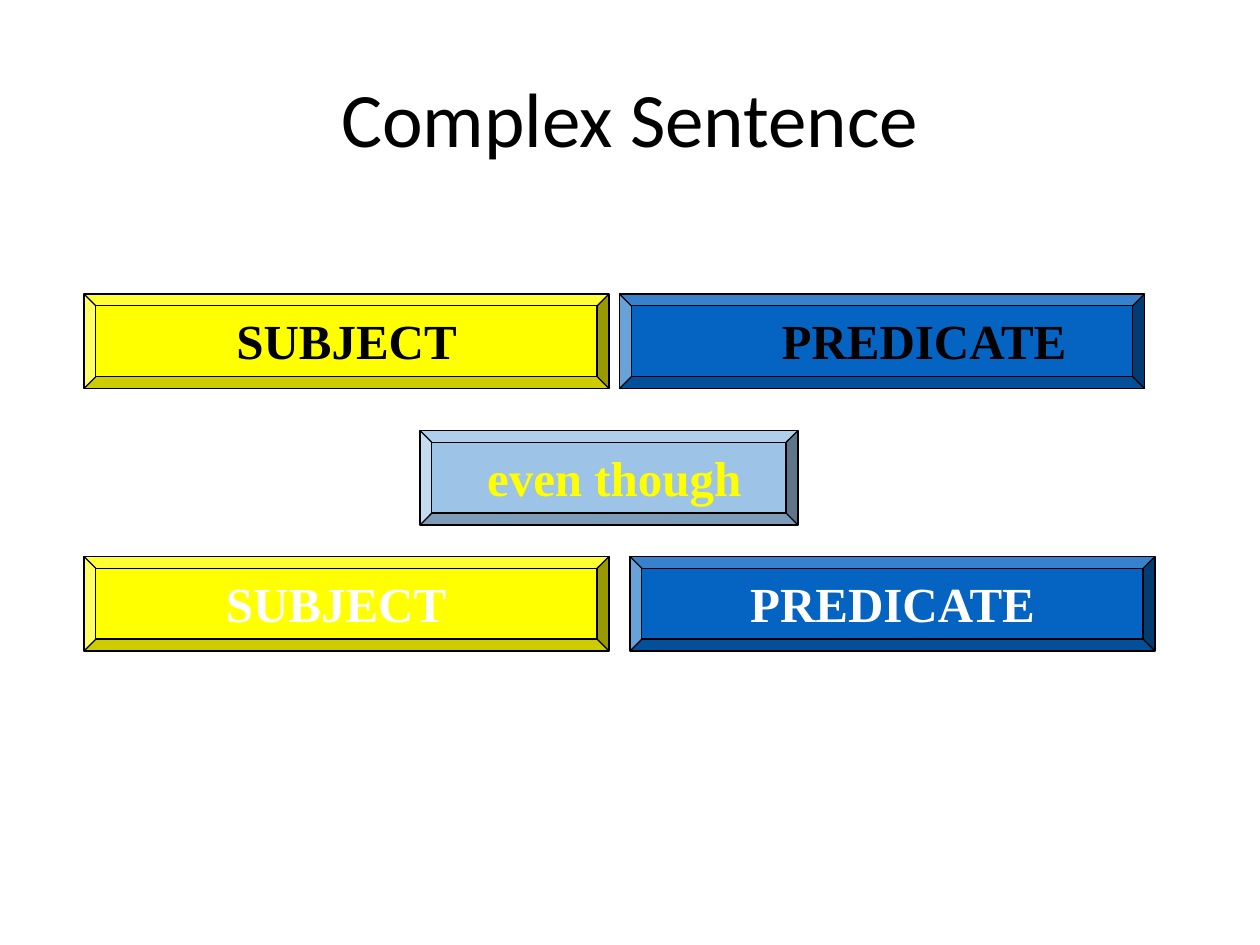
from pptx import Presentation
from pptx.dml.color import RGBColor
from pptx.enum.shapes import MSO_SHAPE
from pptx.enum.text import MSO_ANCHOR, MSO_AUTO_SIZE, PP_ALIGN
from pptx.oxml.ns import qn
from pptx.util import Inches, Pt
from lxml import etree

BEVEL = MSO_SHAPE.BEVEL
CENTER = PP_ALIGN.CENTER
MIDDLE, TOP = MSO_ANCHOR.MIDDLE, MSO_ANCHOR.TOP
GROW, FIXED = MSO_AUTO_SIZE.SHAPE_TO_FIT_TEXT, MSO_AUTO_SIZE.NONE

BLACK = RGBColor(0x00, 0x00, 0x00)
WHITE = RGBColor(0xFF, 0xFF, 0xFF)
YELLOW = RGBColor(0xFF, 0xFF, 0x00)
BLUE = RGBColor(0x05, 0x63, 0xC1)
LIGHT_BLUE = RGBColor(0x9D, 0xC3, 0xE6)

COLUMNS, ROWS = 120, 90
SLIDE_WIDTH, SLIDE_HEIGHT = Inches(10), Inches(7.5)
BAR_WIDTH, BAR_HEIGHT = 50, 9
LABEL_WIDTH, LABEL_HEIGHT = 44, 6.84


def on_grid(column, row, width, height):
    across, down = SLIDE_WIDTH / COLUMNS, SLIDE_HEIGHT / ROWS
    return [round(n) for n in (column * across, row * down, width * across, height * down)]


def set_format(target, values):
    for attribute, value in values.items():
        setattr(target, attribute, value)


def add_words(slide, box, words, font, frame):
    text_frame = slide.shapes.add_textbox(*on_grid(*box)).text_frame
    set_format(text_frame, {"word_wrap": True, **frame})
    paragraph = text_frame.paragraphs[0]
    paragraph.alignment = CENTER
    run = paragraph.add_run()
    run.text = words
    run.font.color.rgb = font["color"]
    set_format(run.font, {key: value for key, value in font.items() if key != "color"})
    return paragraph


def add_title(slide, box, words):
    font = {"name": "Calibri", "size": Pt(44), "color": BLACK}
    add_words(slide, box, words, font, {"vertical_anchor": MIDDLE, "auto_size": FIXED})


def add_bar(slide, box, fill):
    bar = slide.shapes.add_shape(BEVEL, *on_grid(*box))
    bar.adjustments[0] = 0.125
    bar.shadow.inherit = False
    bar.fill.solid()
    bar.fill.fore_color.rgb = fill
    bar.line.color.rgb = BLACK
    bar.line.width = Pt(0.75)


def add_label(slide, box, words, color):
    font = {"name": "Times New Roman", "size": Pt(28), "bold": True, "color": color}
    paragraph = add_words(slide, box, words, font, {"vertical_anchor": TOP, "auto_size": GROW})
    spacing = etree.SubElement(paragraph.alignment and paragraph._p.get_or_add_pPr(), qn("a:spcBef"))
    etree.SubElement(spacing, qn("a:spcPct")).set("val", "50000")


def add_conjunction(slide, box, words):
    column, row, width, height = box
    add_bar(slide, box, LIGHT_BLUE)
    add_label(slide, (column + 3, row + 1, width - 5, LABEL_HEIGHT), words, YELLOW)


def add_clause(slide, box, gap, label_shifts, color):
    left, row, width, height = box
    parts = zip(("SUBJECT", "PREDICATE"), (YELLOW, BLUE), label_shifts)
    for index, (words, fill, shift) in enumerate(parts):
        column = left + index * (width + gap)
        add_bar(slide, (column, row, width, height), fill)
        add_label(slide, (column + shift, row + 1, LABEL_WIDTH, LABEL_HEIGHT), words, color)


def main():
    deck = Presentation()
    set_format(deck, {"slide_width": SLIDE_WIDTH, "slide_height": SLIDE_HEIGHT})
    slide = deck.slides.add_slide(deck.slide_layouts[6])
    add_conjunction(slide, (40, 41, 36, BAR_HEIGHT), "even though")
    add_title(slide, (6, 3.6, 108, 15), "Complex Sentence")
    add_clause(slide, (8, 28, BAR_WIDTH, BAR_HEIGHT), 1, (3, 7), BLACK)
    add_clause(slide, (8, 53, BAR_WIDTH, BAR_HEIGHT), 2, (2, 3), WHITE)
    deck.save("out.pptx")


if __name__ == "__main__":
    main()
